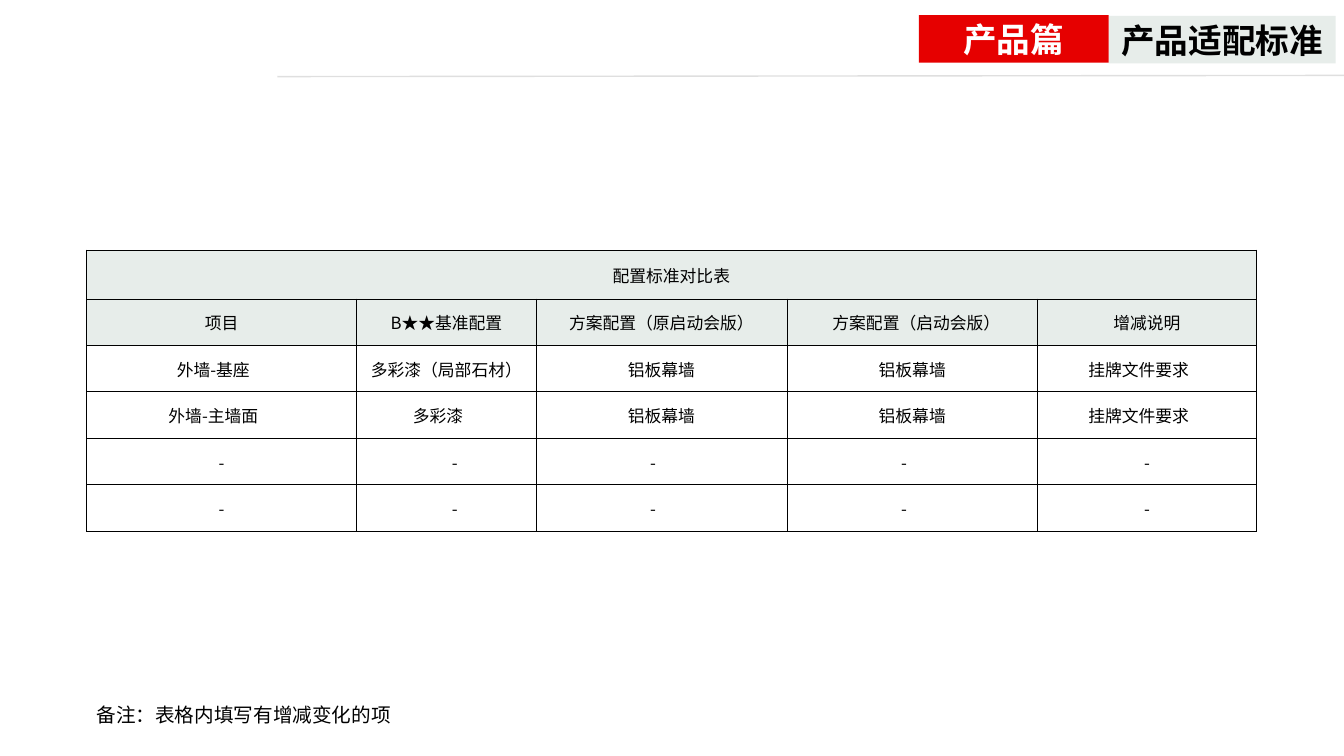
"""Build the slide comparing product configuration standards."""
from lxml.etree import SubElement
from pptx import Presentation
from pptx.dml.color import RGBColor
from pptx.enum.shapes import MSO_CONNECTOR, MSO_SHAPE
from pptx.enum.text import MSO_ANCHOR, MSO_AUTO_SIZE, PP_ALIGN
from pptx.oxml import parse_xml
from pptx.oxml.ns import nsdecls, qn
from pptx.util import Cm, Pt

FONT = "Noto Sans CJK SC"
COLORS = {
    "red": "E60000",
    "pale": "E7EDEA",
    "black": "000000",
    "white": "FFFFFF",
    "rule": "C0C0C0",
}


def write(text_frame, text, size, color="black", bold=False, align=PP_ALIGN.CENTER):
    """Fill the first paragraph with text in the slide font."""
    paragraph = text_frame.paragraphs[0]
    paragraph.text = text
    paragraph.alignment = align
    font = paragraph.font
    font.size = Pt(size)
    font.bold = bold
    font.color.rgb = RGBColor.from_string(COLORS[color])
    font.name = FONT
    properties = paragraph._p.pPr.find(qn("a:defRPr"))
    SubElement(properties, qn("a:ea")).set("typeface", FONT)


def add_borders(cell):
    """Draw a thin black line on each side of a cell."""
    for side in ("lnL", "lnR", "lnT", "lnB"):
        cell._tc.get_or_add_tcPr().append(parse_xml(
            f'<a:{side} w="6350" {nsdecls("a")}><a:solidFill>'
            f'<a:srgbClr val="{COLORS["black"]}"/></a:solidFill></a:{side}>'))


presentation = Presentation()
presentation.slide_width = Cm(33.87)
presentation.slide_height = Cm(19.05)
slide = presentation.slides.add_slide(presentation.slide_layouts[6])

rule = slide.shapes.add_connector(
    MSO_CONNECTOR.STRAIGHT, Cm(6.99), Cm(1.93), Cm(33.87), Cm(1.9))
rule.line.width = Pt(1)
rule.line.color.rgb = RGBColor.from_string(COLORS["rule"])
rule_color = rule._element.spPr.find(".//" + qn("a:srgbClr"))
SubElement(rule_color, qn("a:alpha")).set("val", "50000")
SubElement(rule._element.spPr, qn("a:effectLst"))

note = slide.shapes.add_textbox(Cm(2.18), Cm(17.58), Cm(8.38), Cm(0.86))
note.text_frame.word_wrap = True
note.text_frame.auto_size = MSO_AUTO_SIZE.SHAPE_TO_FIT_TEXT
write(note.text_frame, "备注：表格内填写有增减变化的项", 14, align=PP_ALIGN.LEFT)

tags = [
    ("产品适配标准", 27.94, 0.4, 5.72, "pale", "black"),
    ("产品篇", 23.16, 0.38, 4.78, "red", "white"),
]
for text, left, top, width, fill, color in tags:
    tag = slide.shapes.add_shape(
        MSO_SHAPE.RECTANGLE, Cm(left), Cm(top), Cm(width), Cm(1.2))
    tag.shadow.inherit = False
    tag.fill.solid()
    tag.fill.fore_color.rgb = RGBColor.from_string(COLORS[fill])
    tag.line.fill.background()
    tag.text_frame.vertical_anchor = MSO_ANCHOR.MIDDLE
    write(tag.text_frame, text, 24, color, bold=True)

rows = [
    ["配置标准对比表", "", "", "", ""],
    ["项目", "B★★基准配置", "方案配置（原启动会版）", "方案配置（启动会版）", "增减说明"],
    ["外墙-基座", "多彩漆（局部石材）", "铝板幕墙", "铝板幕墙", "挂牌文件要求"],
    ["外墙-主墙面", "多彩漆", "铝板幕墙", "铝板幕墙", "挂牌文件要求"],
    ["-"] * 5,
    ["-"] * 5,
]
indents = [
    [0, 0, 0, 0, 0],
    [0, 0, 0, 0.5, 0],
    [-1, 0, 0, 0, -1],
    [-1, -1, 0, 0, -1],
    [0, 1, -1, -1, 0],
    [0, 1, -1, -1, 0],
]
column_widths = [6.81, 4.52, 6.32, 6.32, 5.51]
row_heights = [1.23] + [1.17] * 5
cell_margin = 0.03
em = 0.42

table = slide.shapes.add_table(
    len(rows), len(column_widths), Cm(2.18), Cm(6.3),
    Cm(sum(column_widths)), Cm(sum(row_heights))).table
table.first_row = False
table.horz_banding = False
for column, width in zip(table.columns, column_widths):
    column.width = Cm(width)
for row, height in zip(table.rows, row_heights):
    row.height = Cm(height)
table.cell(0, 0).merge(table.cell(0, 4))

for row_index, texts in enumerate(rows):
    for column_index, text in enumerate(texts):
        cell = table.cell(row_index, column_index)
        indent = indents[row_index][column_index] * em
        cell.margin_left = Cm(cell_margin + max(indent, 0))
        cell.margin_right = Cm(cell_margin + max(-indent, 0))
        cell.margin_top = Cm(cell_margin)
        cell.margin_bottom = Cm(0)
        cell.vertical_anchor = MSO_ANCHOR.MIDDLE
        add_borders(cell)
        if row_index < 2:
            cell.fill.solid()
            cell.fill.fore_color.rgb = RGBColor.from_string(COLORS["pale"])
        else:
            cell.fill.background()
        if text:
            write(cell.text_frame, text, 12)

presentation.save("out.pptx")
